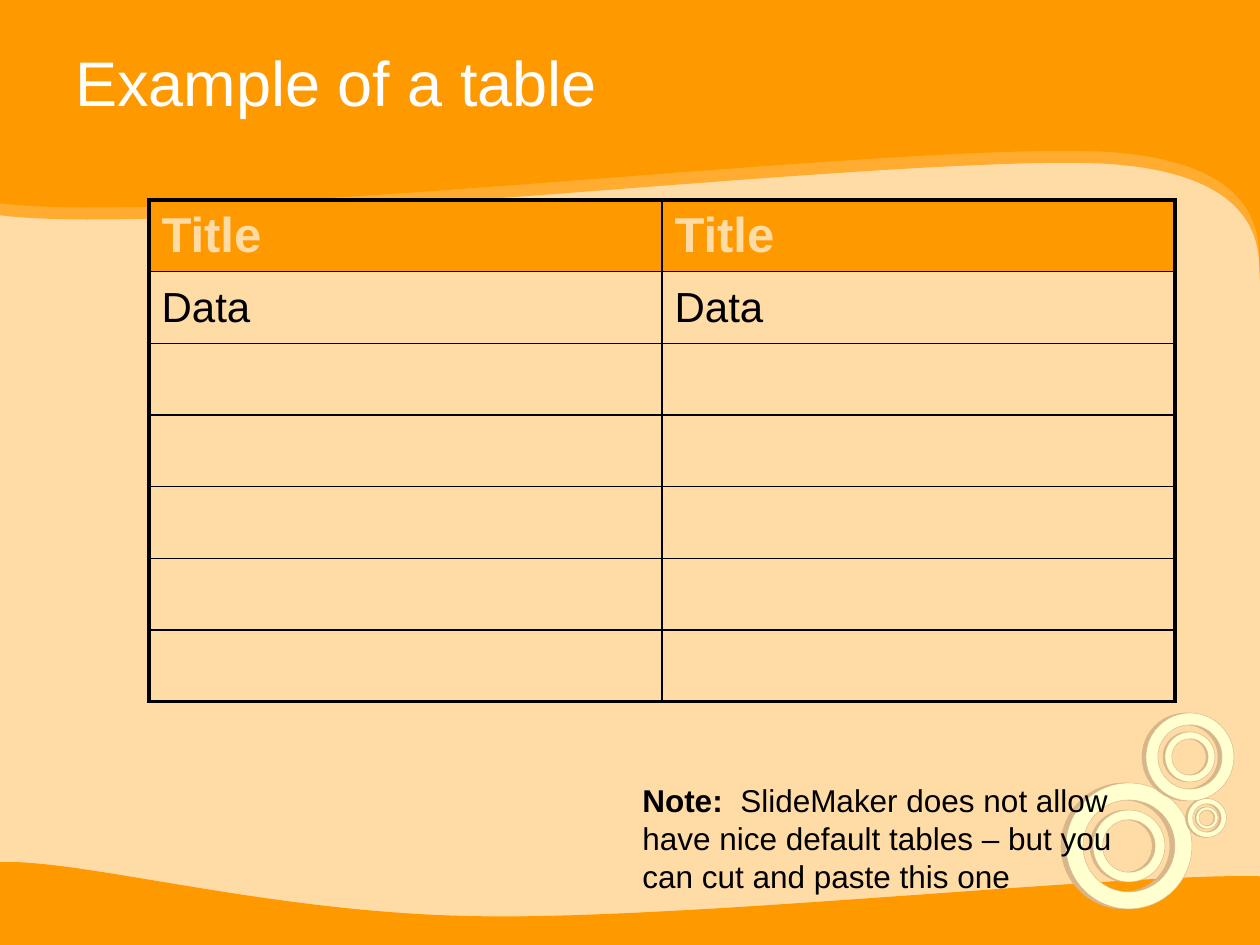
import pptx
import pptx.dml.color
import pptx.enum.shapes
import pptx.enum.text
import pptx.oxml.ns
import pptx.util
from lxml import etree

PX_PER_INCH = 126
ORANGE, BAND, SAND = "FF9900", "FFAC31", "FFDBA6"
CREAM, TAN, BLACK, WHITE = "FFFFD0", "D9B68A", "000000", "FFFFFF"


def px(length):
    return pptx.util.Emu(round(length * 914400 / PX_PER_INCH))


def rgb(value):
    return pptx.dml.color.RGBColor.from_string(value)


def curve(start, c1, c2, end, steps=40):
    """Points along a cubic curve, after its start."""
    for step in range(1, steps + 1):
        t = step / steps
        u = 1 - t
        weights = (u ** 3, 3 * u * u * t, 3 * u * t * t, t ** 3)
        yield tuple(sum(w * p[axis] for w, p in zip(weights, (start, c1, c2, end)))
                    for axis in (0, 1))


def wave(straight, curves):
    """Outline of straight corners followed by joined curves."""
    points = list(straight)
    for controls in curves:
        points.extend(curve(points[-1], *controls))
    return points


class SlideStyle:
    font = "Arial"

    def __init__(self, slide):
        self.slide = slide
        self.shapes = slide.shapes

    def background(self, color):
        fill = self.slide.background.fill
        fill.solid()
        fill.fore_color.rgb = rgb(color)

    def paint(self, shape, fill, line, width):
        shape.shadow.inherit = False
        shape.fill.solid()
        shape.fill.fore_color.rgb = rgb(fill)
        shape.line.color.rgb = rgb(line)
        shape.line.width = pptx.util.Pt(width)

    def outline(self, points, color, drop=0):
        corners = [(px(x), px(y + drop)) for x, y in points]
        builder = self.shapes.build_freeform(*corners[0])
        builder.add_line_segments(corners[1:])
        self.paint(builder.convert_to_shape(), color, color, 0.75)

    def ring(self, center_x, center_y, diameter):
        depth = max(1, round(diameter * 0.04))
        for shift, color in ((-depth, TAN), (0, CREAM)):
            ring = self.shapes.add_shape(
                pptx.enum.shapes.MSO_SHAPE.DONUT,
                px(center_x - diameter / 2 + shift), px(center_y - diameter / 2),
                px(diameter), px(diameter))
            ring.adjustments[0] = 0.135
            self.paint(ring, color, TAN, 0.25)

    def styled_run(self, paragraph, text, size, color, bold=False):
        run = paragraph.add_run()
        run.text = text
        values = {"name": self.font, "size": pptx.util.Pt(size), "bold": bold}
        for attribute, value in values.items():
            setattr(run.font, attribute, value)
        run.font.color.rgb = rgb(color)

    def text(self, box, runs, anchor):
        frame = self.shapes.add_textbox(*map(px, box)).text_frame
        for attribute, value in {"word_wrap": True, "vertical_anchor": anchor}.items():
            setattr(frame, attribute, value)
        for run in runs:
            self.styled_run(frame.paragraphs[0], *run)

    def border(self, cell, side, width):
        properties = cell._tc.get_or_add_tcPr()
        line = etree.SubElement(properties, pptx.oxml.ns.qn(f"a:ln{side}"),
                                w=str(int(pptx.util.Pt(width))))
        fill = etree.SubElement(line, pptx.oxml.ns.qn("a:solidFill"))
        etree.SubElement(fill, pptx.oxml.ns.qn("a:srgbClr"), val=BLACK)

    def table(self, box, rows):
        last_row, last_column = len(rows) - 1, len(rows[0]) - 1
        table = self.shapes.add_table(len(rows), len(rows[0]), *map(px, box)).table
        for r, row in enumerate(rows):
            for c, label in enumerate(row):
                cell = table.cell(r, c)
                cell.vertical_anchor = pptx.enum.text.MSO_ANCHOR.MIDDLE
                outer = {"L": c == 0, "R": c == last_column,
                         "T": r == 0, "B": r == last_row}
                for side, is_outer in outer.items():
                    self.border(cell, side, 2.25 if is_outer else 1)
                if r == 0:
                    cell.fill.solid()
                    cell.fill.fore_color.rgb = rgb(ORANGE)
                else:
                    cell.fill.background()
                if label:
                    look = (28, SAND, True) if r == 0 else (24, BLACK)
                    self.styled_run(cell.text_frame.paragraphs[0], label, *look)


def main():
    deck = pptx.Presentation()
    deck.slide_width, deck.slide_height = px(1260), px(945)
    page = SlideStyle(deck.slides.add_slide(deck.slide_layouts[6]))
    page.background(SAND)

    # Waves at the bottom and top, the top one over a lighter band
    bottom_wave = wave(
        [(1260, 946), (-1, 949), (-3, 863)],
        [((78, 858), (272, 915), (483, 917)),
         ((693, 920), (1131, 873), (1261, 877))])
    top_wave = wave(
        [(-4, -5), (1268, -6), (1268, 267)],
        [((1240, 294), (1315, 163), (1104, 151)),
         ((892, 141), (180, 228), (-5, 202))])
    page.outline(bottom_wave, ORANGE)
    page.outline(top_wave, BAND, drop=12)
    page.outline(top_wave, ORANGE)

    # Three pairs of concentric rings
    for x, y, outer, inner in ((1129, 846, 126, 72), (1207, 818, 39, 22),
                               (1190, 757, 88, 50)):
        page.ring(x, y, outer)
        page.ring(x, y, inner)

    # Title
    page.text((63, 26, 1118, 110), [("Example of a table", 36, WHITE)],
              pptx.enum.text.MSO_ANCHOR.MIDDLE)

    # Table with a heading row, a data row and empty rows
    page.table((149, 200, 1026, 502),
               [["Title"] * 2, ["Data"] * 2] + [[""] * 2] * 5)

    # Note
    page.text((630, 775, 530, 126),
              [("Note:  ", 18, BLACK, True),
               ("SlideMaker does not allow have nice default tables – but you "
                "can cut and paste this one", 18, BLACK)],
              pptx.enum.text.MSO_ANCHOR.TOP)

    deck.save("out.pptx")


if __name__ == "__main__":
    main()
